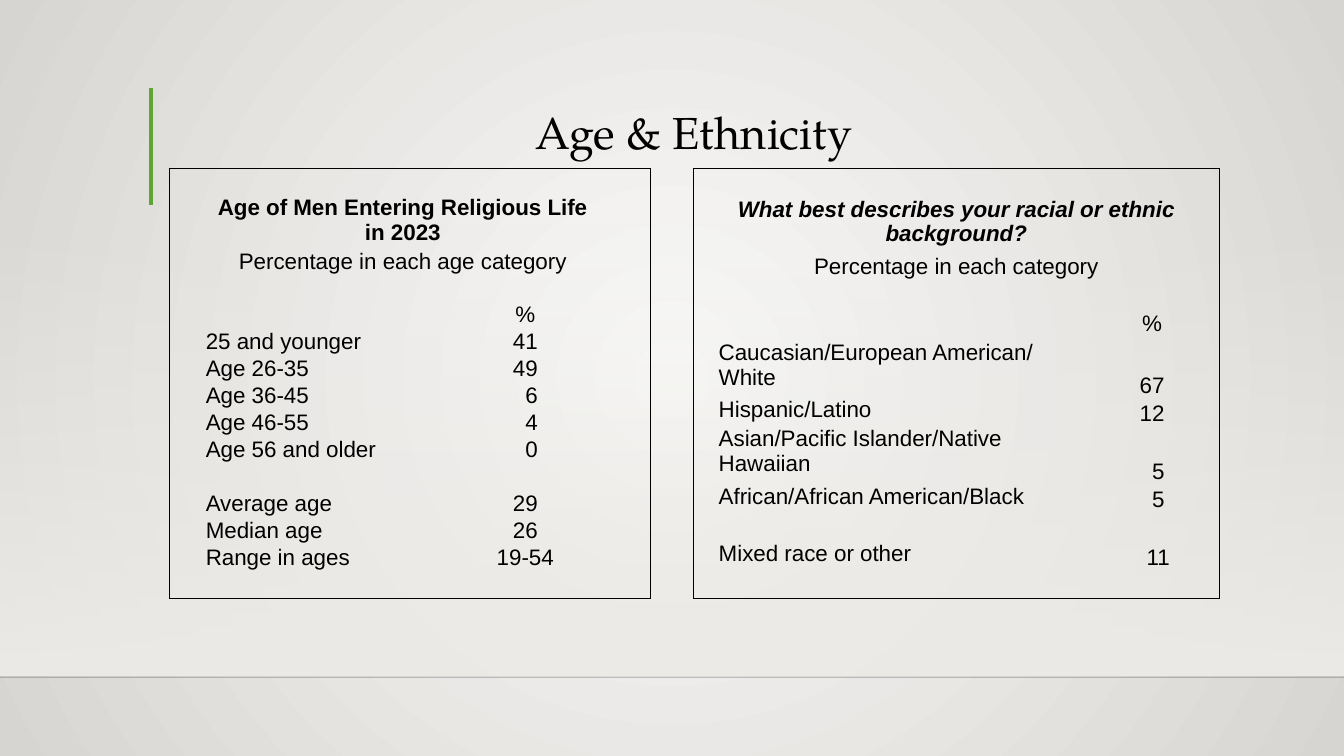
"""Build the Age & Ethnicity slide with its two survey tables."""
from dataclasses import dataclass

from lxml.etree import SubElement
from pptx import Presentation
from pptx.dml.color import RGBColor
from pptx.enum.shapes import MSO_CONNECTOR, MSO_SHAPE
from pptx.enum.text import MSO_ANCHOR, PP_ALIGN
from pptx.oxml import parse_xml
from pptx.oxml.ns import nsdecls, qn
from pptx.util import Pt


@dataclass(frozen=True)
class Theme:
    """Colours, fonts and type sizes."""
    ink: str = "000000"
    rule: str = "000001"
    green: str = "5FA534"
    band: str = "EDEBE7"
    light: str = "FAFAF9"
    dark: str = "D7D5D2"
    serif: str = "TeX Gyre Pagella"
    sans: str = "Arial"
    head: int = 32
    body: int = 16


THEME = Theme()
PLAIN = "{2D5ABB26-0587-4C30-8999-92F81FD0307C}"
RADIAL = ('<a:path path="circle"><a:fillToRect l="50000" t="50000" '
          'r="50000" b="50000"/></a:path>')
DOWN = '<a:lin ang="5400000" scaled="0"/>'
SHIFT = 9
AGES = [
    ("25 and younger", "41", 0), ("Age 26-35", "49", 0),
    ("Age 36-45", "6", SHIFT), ("Age 46-55", "4", SHIFT),
    ("Age 56 and older", "0", SHIFT), None,
    ("Average age", "29", 0), ("Median age", "26", 0),
    ("Range in ages", "19-54", 0),
]
RACES = [
    ("Caucasian/European American/\nWhite", "67", 0),
    ("Hispanic/Latino", "12", 0),
    ("Asian/Pacific Islander/Native Hawaiian", "5", SHIFT),
    ("African/African American/Black", "5", SHIFT), None,
    ("Mixed race or other", "11", SHIFT),
]


def write(frame, text, font=THEME.sans, size=THEME.body, bold=False,
          italic=False, align=PP_ALIGN.LEFT, lead=None):
    """Fill a text frame, one paragraph for each line of text."""
    for i, line in enumerate(text.split("\n")):
        para = frame.add_paragraph() if i else frame.paragraphs[0]
        para.alignment, para.line_spacing = align, lead
        run = para.add_run()
        run.text = line
        run.font.name, run.font.size = font, Pt(size)
        run.font.bold, run.font.italic = bold, italic
        run.font.color.rgb = RGBColor.from_string(THEME.ink)


def blend(root, stops, shade):
    """Swap the first solid fill under root for a gradient."""
    marks = "".join(
        f'<a:gs pos="{pos * 1000}"><a:srgbClr val="{tint}">'
        f'<a:alpha val="{alpha * 1000}"/></a:srgbClr></a:gs>'
        for pos, tint, alpha in stops)
    old = root.xpath(".//a:solidFill")[0]
    old.getparent().replace(old, parse_xml(
        f'<a:gradFill {nsdecls("a")} rotWithShape="1">'
        f'<a:gsLst>{marks}</a:gsLst>{shade}</a:gradFill>'))


def stroke(slide, start, end, tint, width, alpha=100):
    """Draw a straight line between two points."""
    line = slide.shapes.add_connector(
        MSO_CONNECTOR.STRAIGHT, *map(Pt, start + end))
    line.line.width = Pt(width)
    line.line.color.rgb = RGBColor.from_string(tint)
    props = line.element.spPr
    SubElement(props.xpath(".//a:srgbClr")[0], qn("a:alpha"),
               val=str(alpha * 1000))
    SubElement(props, qn("a:effectLst"))


def stage(slide, width):
    """Lay down the backdrop, its fading band and the floor line."""
    slide.background.fill.solid()
    blend(slide.element, [(0, THEME.light, 100), (100, THEME.dark, 100)],
          RADIAL)
    band = slide.shapes.add_shape(
        MSO_SHAPE.RECTANGLE, 0, Pt(158.4), Pt(width), Pt(324))
    band.shadow.inherit = False
    band.fill.solid()
    blend(band.element, [(0, THEME.band, 0), (100, THEME.band, 100)], DOWN)
    band.line.fill.background()
    stroke(slide, (0, 483.8), (width, 483.8), THEME.rule, 1, alpha=20)


def title(slide, text, left, top, width, height):
    """Place the heading and the green bar at its left."""
    bar = left - 13
    stroke(slide, (bar, top - 0.7), (bar, top + 83.5), THEME.green, 3)
    frame = slide.shapes.add_textbox(
        *map(Pt, (left, top, width, height))).text_frame
    frame.word_wrap = True
    frame.vertical_anchor = MSO_ANCHOR.BOTTOM
    frame.margin_bottom = 0
    write(frame, text, font=THEME.serif, size=THEME.head,
          align=PP_ALIGN.CENTER, lead=0.9)


def edge(cell, sides):
    """Rule the given sides of a cell and leave the others bare."""
    props = cell._tc.get_or_add_tcPr()
    for side in "LRTB":
        line = SubElement(props, qn(f"a:ln{side}"), w=str(Pt(1)))
        if side in sides:
            fill = SubElement(line, qn("a:solidFill"))
            SubElement(fill, qn("a:srgbClr"), val=THEME.ink)
        else:
            SubElement(line, qn("a:noFill"))


def grid(slide, left, top, cols, rows, spans):
    """Add a bare table with a thin outer frame."""
    box = map(Pt, (left, top, sum(cols), sum(rows)))
    table = slide.shapes.add_table(len(rows), len(cols), *box).table
    table.first_row = table.horz_banding = False
    table._tbl.xpath(".//a:tableStyleId")[0].text = PLAIN
    for col, width in zip(table.columns, cols):
        col.width = Pt(width)
    for row, height in zip(table.rows, rows):
        row.height = Pt(height)
    for row, first, last in spans:
        table.cell(row, first).merge(table.cell(row, last))
    for r in range(len(rows)):
        for c in range(len(cols)):
            cell = table.cell(r, c)
            cell.margin_left = cell.margin_right = Pt(5)
            cell.margin_top = cell.margin_bottom = 0
            end = c + cell.span_width
            edge(cell, "L" * (c == 0) + "R" * (end == len(cols))
                 + "T" * (r == 0) + "B" * (r == len(rows) - 1))
            cell.fill.background()
            SubElement(cell.text_frame.paragraphs[0]._p,
                       qn("a:endParaRPr"), sz=str(THEME.body * 100))
    return table


def survey(table, first, heading, note, data, italic=False,
           anchor=MSO_ANCHOR.TOP):
    """Fill in the headings, then a label and a figure on each row."""
    mid = PP_ALIGN.CENTER
    write(table.cell(1, first).text_frame, heading, bold=True,
          italic=italic, align=mid)
    write(table.cell(2, first).text_frame, note, align=mid)
    write(table.cell(4, 3).text_frame, "%", align=mid)
    for r, entry in enumerate(data, 5):
        if entry:
            label, value, shift = entry
            write(table.cell(r, 1).text_frame, label)
            cell = table.cell(r, 3)
            cell.margin_left = Pt(5 + shift)
            cell.vertical_anchor = anchor
            write(cell.text_frame, value, align=mid)


def ages(slide, left, top):
    """Place the table of ages."""
    step = 17.85
    rows = [step * (2 if r == 1 else 1) for r in range(15)]
    spans = [(0, 2, 3)] + [(r, 1, 4) for r in (1, 2, 3)]
    spans += [(r, 3, 4) for r in range(4, 15)]
    table = grid(slide, left, top, [21, 154, 21, 69, 47.5, 31], rows, spans)
    survey(table, 1, "Age of Men Entering Religious Life in 2023",
           "Percentage in each age category", AGES)


def races(slide, left, top):
    """Place the table of ethnic groups."""
    step = 20.5
    rows = [step * (2 if r in (1, 5, 7) else 1) for r in range(12)]
    spans = [(r, 0, 4) for r in range(4)]
    table = grid(slide, left, top, [13, 249, 30.5, 70, 13], rows, spans)
    survey(table, 0, "What best describes your racial or ethnic background?",
           "Percentage in each category", RACES, italic=True,
           anchor=MSO_ANCHOR.BOTTOM)


def main():
    """Build and save the deck."""
    deck = Presentation()
    deck.slide_width, deck.slide_height = Pt(960), Pt(540)
    slide = deck.slides.add_slide(deck.slide_layouts[6])
    stage(slide, 960)
    title(slide, "Age & Ethnicity", 121, 63.3, 749.5, 50.4)
    ages(slide, 121, 120.2)
    races(slide, 495.4, 120.2)
    deck.save("out.pptx")


if __name__ == "__main__":
    main()
